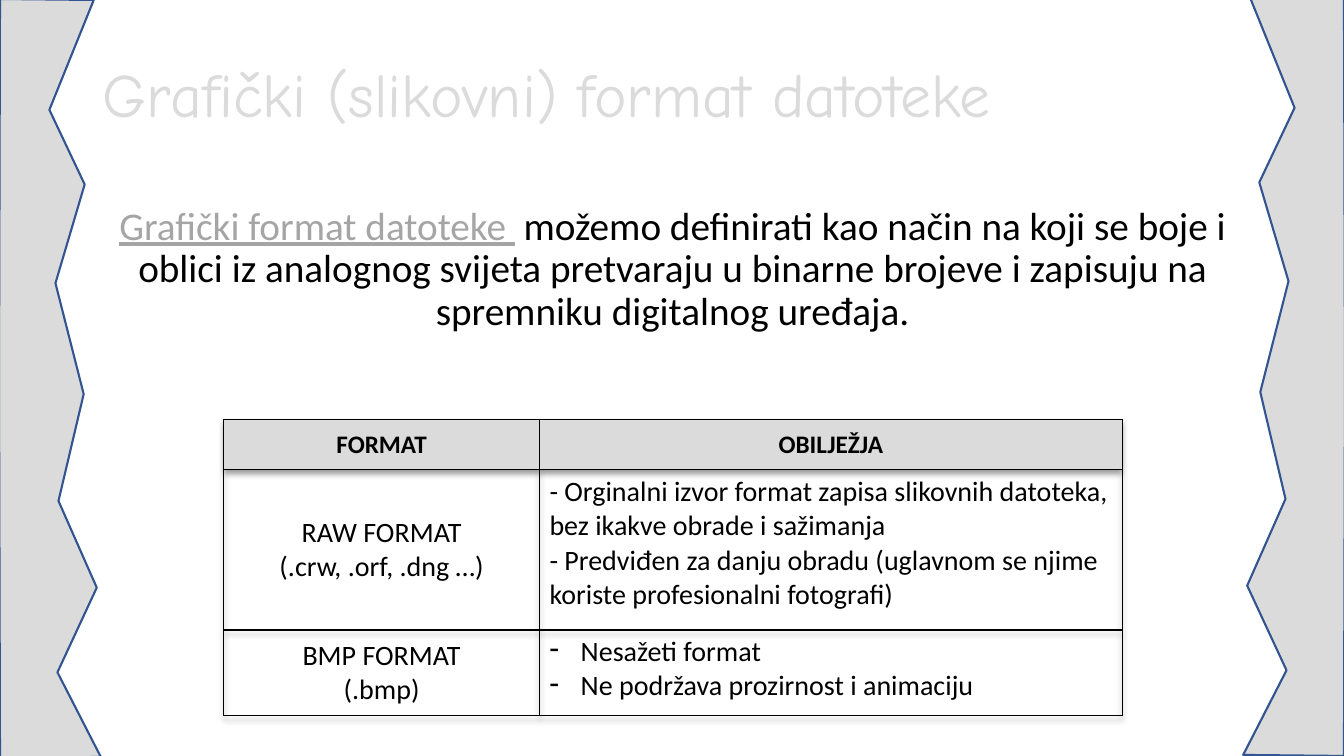
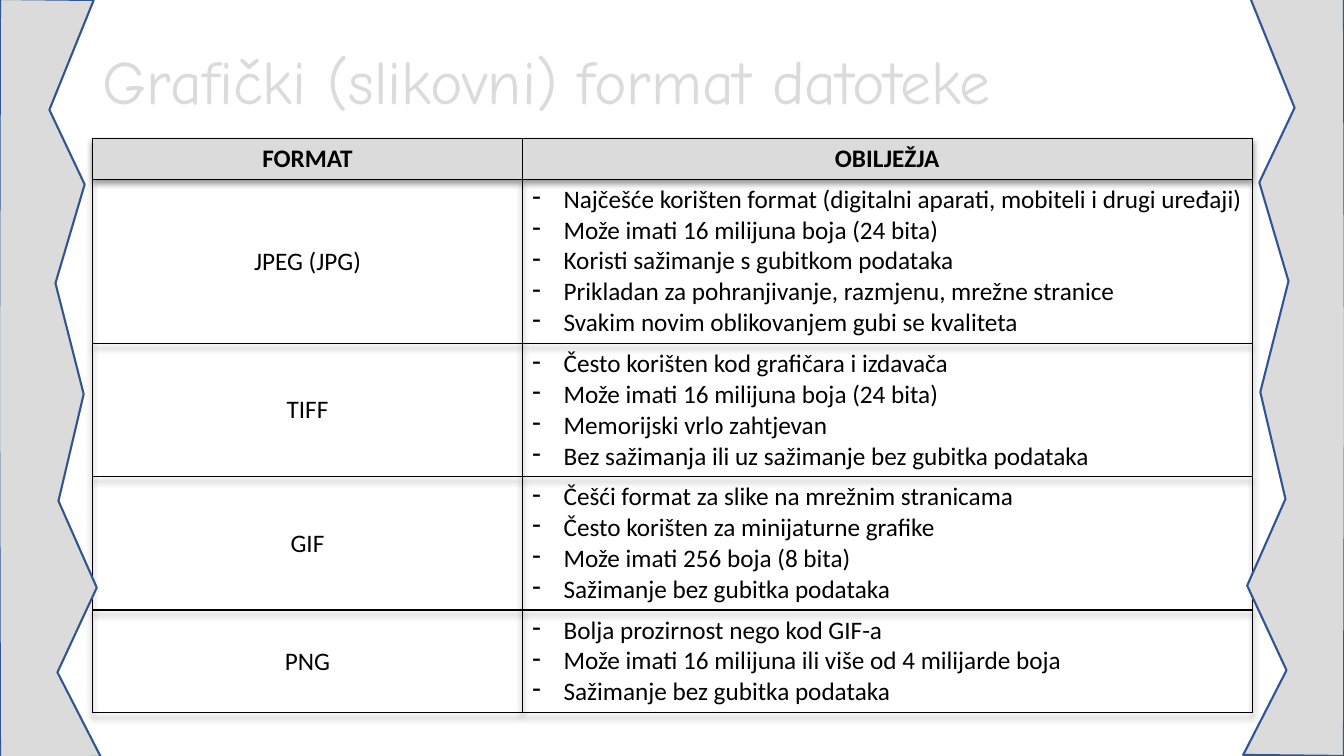
"""Build two slides on graphic file formats, framed by jagged side bands."""
from lxml.etree import SubElement
from pptx import Presentation
from pptx.dml.color import RGBColor
from pptx.enum.text import MSO_ANCHOR as Anchor, MSO_AUTO_SIZE as AutoSize, PP_ALIGN as Align
from pptx.oxml import parse_xml
from pptx.oxml.ns import nsdecls, qn
from pptx.util import Pt

PX = 9144
W, H = 1333, 750
GREY, DARK_GREY, BLUE, BLACK = "DBDBDB", "A5A5A5", "325491", "000000"
TITLE_FONT, BODY_FONT = "Comic Neue", "Calibri"
INDENT = 31

TITLE = "Grafički (slikovni) format datoteke"
HEADER = ("FORMAT", "OBILJEŽJA")
LEFT_BAND = [(0, -1), (93, 0), (49, 109), (84, 183), (55, 281), (83, 391),
             (58, 497), (96, 583), (57, 667), (100, 751), (0, 752), (-1, 376)]
RIGHT_BAND = [(W - x, y - 2) for x, y in LEFT_BAND]

DEFINITION = [
    ("Grafički format datoteke ", DARK_GREY, True),
    (" možemo definirati kao način na koji se boje i oblici iz analognog svijeta "
     "pretvaraju u binarne brojeve i zapisuju na spremniku digitalnog uređaja.", BLACK, False),
]
SLIDES = [
    {"title_top": 24, "definition": DEFINITION, "at": (222, 416), "cols": (313, 578),
     "size": 20, "heights": (50, 159, 85), "rows": [
         (["RAW FORMAT", "(.crw, .orf, .dng …)"],
          ["- Orginalni izvor format zapisa slikovnih datoteka, bez ikakve obrade i sažimanja",
           "- Predviđen za danju obradu (uglavnom se njime koriste profesionalni fotografi)"]),
         (["BMP FORMAT", "(.bmp)"],
          ["Nesažeti format", "Ne podržava prozirnost i animaciju"]),
     ]},
    {"title_top": 11, "definition": [], "at": (92, 137), "cols": (426, 724),
     "size": 18, "heights": (41, 163, 132, 132, 102), "rows": [
         (["JPEG (JPG)"],
          ["Najčešće korišten format (digitalni aparati, mobiteli i drugi uređaji)",
           "Može imati 16 milijuna boja (24 bita)",
           "Koristi sažimanje s gubitkom podataka",
           "Prikladan za pohranjivanje, razmjenu, mrežne stranice",
           "Svakim novim oblikovanjem gubi se kvaliteta"]),
         (["TIFF"],
          ["Često korišten kod grafičara i izdavača",
           "Može imati 16 milijuna boja (24 bita)",
           "Memorijski vrlo zahtjevan",
           "Bez sažimanja ili uz sažimanje bez gubitka podataka"]),
         (["GIF"],
          ["Češći format za slike na mrežnim stranicama",
           "Često korišten za minijaturne grafike",
           "Može imati 256 boja (8 bita)",
           "Sažimanje bez gubitka podataka"]),
         (["PNG"],
          ["Bolja prozirnost nego kod GIF-a",
           "Može imati 16 milijuna ili više od 4 milijarde boja",
           "Sažimanje bez gubitka podataka"]),
     ]},
]


def px(*values):
    return [v * PX for v in values]


def rgb(color):
    return RGBColor.from_string(color)


def add_run(p, text, size, color=BLACK, font=BODY_FONT, bold=False, underline=False):
    r = p.add_run()
    r.text = text
    r.font.size, r.font.name = Pt(size), font
    r.font.bold, r.font.underline = bold, underline
    r.font.color.rgb = rgb(color)


def add_title(s, top):
    sp = s.shapes.title
    sp.left, sp.top, sp.width, sp.height = px(92, top, 1150, 145)
    tf = sp.text_frame
    tf.auto_size, tf.vertical_anchor = AutoSize.NONE, Anchor.MIDDLE
    p = tf.paragraphs[0]
    p.alignment, p.line_spacing = Align.LEFT, 0.9
    add_run(p, TITLE, 44, GREY, TITLE_FONT)


def add_definition(s, runs):
    tf = s.shapes.add_textbox(*px(92, 200, 1150, 150)).text_frame
    tf.word_wrap = True
    p = tf.paragraphs[0]
    p.alignment, p.line_spacing = Align.CENTER, 0.9
    for text, color, underline in runs:
        add_run(p, text, 28, color, underline=underline)


def add_dash(p):
    pPr = p._p.get_or_add_pPr()
    pPr.set("marL", str(INDENT * PX))
    pPr.set("indent", str(-INDENT * PX))
    SubElement(pPr, qn("a:buChar")).set("char", "-")


def add_borders(cell):
    tcPr = cell._tc.get_or_add_tcPr()
    for i, side in enumerate(("lnL", "lnR", "lnT", "lnB")):
        tcPr.insert(i, parse_xml(
            f'<a:{side} {nsdecls("a")} w="12700"><a:solidFill>'
            f'<a:srgbClr val="{BLACK}"/></a:solidFill></a:{side}>'))


def fill_cell(cell, lines, size, header=False, centered=True):
    if header:
        cell.fill.solid()
        cell.fill.fore_color.rgb = rgb(GREY)
    else:
        cell.fill.background()
    add_borders(cell)
    cell.vertical_anchor = Anchor.MIDDLE if centered else Anchor.TOP
    tf = cell.text_frame
    for i, line in enumerate(lines):
        p = tf.add_paragraph() if i else tf.paragraphs[0]
        p.alignment = Align.CENTER if centered else Align.LEFT
        if not centered and not line.startswith("-"):
            add_dash(p)
        add_run(p, line, size, bold=header)


def add_format_table(s, at, cols, heights, size, rows):
    frame = s.shapes.add_table(len(heights), len(cols), *px(*at, sum(cols), sum(heights)))
    table = frame.table
    table.first_row = table.horz_banding = False
    table._tbl.tblPr.insert(0, parse_xml(
        f'<a:effectLst {nsdecls("a")}><a:outerShdw blurRad="50800" dist="38100" dir="5400000">'
        f'<a:srgbClr val="{BLACK}"><a:alpha val="40000"/></a:srgbClr></a:outerShdw></a:effectLst>'))
    for col, width in zip(table.columns, px(*cols)):
        col.width = width
    for row, height in zip(table.rows, px(*heights)):
        row.height = height
    for c, text in enumerate(HEADER):
        fill_cell(table.cell(0, c), [text], 18, header=True)
    for i, (names, features) in enumerate(rows, 1):
        fill_cell(table.cell(i, 0), names, size)
        fill_cell(table.cell(i, 1), features, size, centered=False)


def add_band(s, points):
    builder = s.shapes.build_freeform(*points[0], scale=PX)
    builder.add_line_segments(points[1:], close=True)
    sp = builder.convert_to_shape()
    sp.shadow.inherit = False
    sp.fill.solid()
    sp.fill.fore_color.rgb = rgb(GREY)
    sp.line.color.rgb = rgb(BLUE)
    sp.line.width = Pt(1.5)


def main():
    prs = Presentation()
    prs.slide_width, prs.slide_height = px(W, H)
    for data in SLIDES:
        s = prs.slides.add_slide(prs.slide_layouts[5])
        add_title(s, data["title_top"])
        if data["definition"]:
            add_definition(s, data["definition"])
        add_format_table(s, data["at"], data["cols"], data["heights"], data["size"], data["rows"])
        for points in (LEFT_BAND, RIGHT_BAND):
            add_band(s, points)
    prs.save("out.pptx")


if __name__ == "__main__":
    main()
